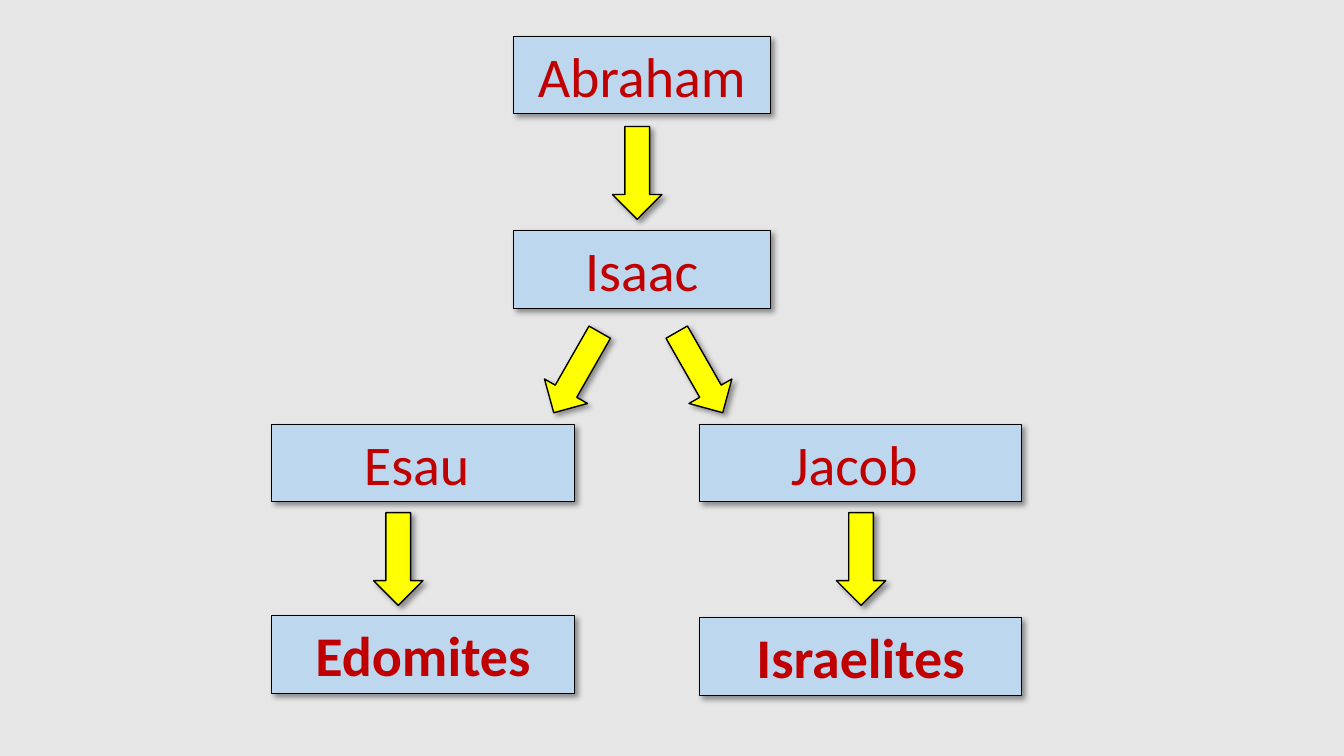
import pptx
import pptx.dml.color
import pptx.enum.shapes
import pptx.enum.text
import pptx.oxml
import pptx.oxml.ns
import pptx.util

EMU_PER_PX = 9144  # 100 px to the inch
COLORS = {"back": "E7E6E6", "box": "BDD7EE", "arrow": "FFFF00",
          "line": "000000", "text": "C00000"}
SHADOW = (
    '<a:outerShdw %s blurRad="50800" dist="38100" dir="2700000" algn="tl" '
    'rotWithShape="0"><a:srgbClr val="000000"><a:alpha val="40000"/>'
    '</a:srgbClr></a:outerShdw>' % pptx.oxml.ns.nsdecls("a"))


def px(n):
    return pptx.util.Emu(n * EMU_PER_PX)


def rgb(name):
    return pptx.dml.color.RGBColor.from_string(COLORS[name])


def write(tf, text, size=40, bold=False, color="text", font="Calibri"):
    p = tf.paragraphs[0]
    p.alignment = pptx.enum.text.PP_ALIGN.CENTER
    r = p.add_run()
    r.text = text
    r.font.name = font
    r.font.size = pptx.util.Pt(size)
    r.font.bold = bold
    r.font.color.rgb = rgb(color)


class FamilyTree:
    def __init__(self, prs):
        self.s = prs.slides.add_slide(prs.slide_layouts[6])
        fill = self.s.background.fill
        fill.solid()
        fill.fore_color.rgb = rgb("back")

    def shape(self, kind, x, y, w, h, fill, line):
        sp = self.s.shapes.add_shape(kind, px(x), px(y), px(w), px(h))
        sp.fill.solid()
        sp.fill.fore_color.rgb = rgb(fill)
        sp.line.color.rgb = rgb("line")
        sp.line.width = pptx.util.Pt(line)
        sp.shadow.inherit = False
        effects = sp._element.spPr.find(pptx.oxml.ns.qn("a:effectLst"))
        effects.append(pptx.oxml.parse_xml(SHADOW))
        return sp

    def box(self, text, x, y, w, bold=False):
        kind = pptx.enum.shapes.MSO_SHAPE.RECTANGLE
        tf = self.shape(kind, x, y, w, 77, "box", 0.75).text_frame
        tf.word_wrap = True
        tf.auto_size = pptx.enum.text.MSO_AUTO_SIZE.SHAPE_TO_FIT_TEXT
        tf.vertical_anchor = pptx.enum.text.MSO_ANCHOR.TOP
        write(tf, text, bold=bold)

    def arrow(self, x, y, angle=90):
        kind = pptx.enum.shapes.MSO_SHAPE.RIGHT_ARROW
        self.shape(kind, x, y, 92, 49, "arrow", 1).rotation = angle


def main():
    prs = pptx.Presentation()
    prs.slide_width, prs.slide_height = px(1333), px(750)
    tree = FamilyTree(prs)

    # Fathers and sons
    for name, x, y, w in (("Abraham", 509, 36, 255), ("Isaac", 509, 229, 255),
                          ("Esau ", 269, 421, 301), ("Jacob ", 694, 421, 319)):
        tree.box(name, x, y, w)

    # Lines of descent
    tree.arrow(586, 147)
    tree.arrow(648, 345, 60.3)
    tree.arrow(526, 345, 119.7)
    for x in (349, 808):
        tree.arrow(x, 530)

    # Peoples
    tree.box("Edomites", 269, 611, 301, bold=True)
    tree.box("Israelites", 694, 613, 319, bold=True)

    prs.save("out.pptx")


if __name__ == "__main__":
    main()
